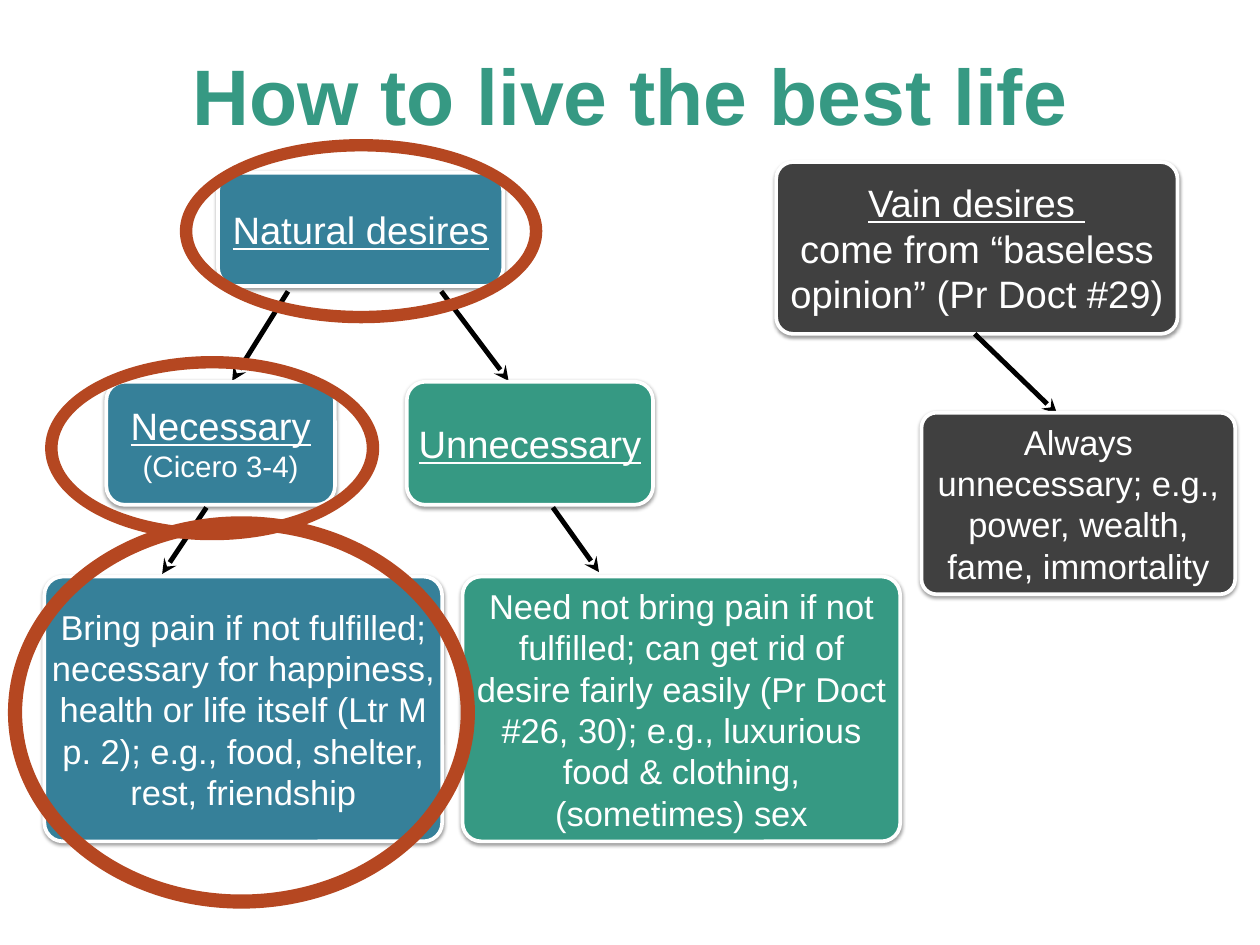
from lxml.etree import SubElement
from pptx import Presentation
from pptx.dml.color import RGBColor
from pptx.enum.shapes import MSO_CONNECTOR as Connector, MSO_SHAPE as Shape
from pptx.enum.text import MSO_ANCHOR as Anchor, PP_ALIGN as Align
from pptx.oxml.ns import qn
from pptx.util import Inches, Pt

BLUE = RGBColor(0x36, 0x80, 0x99)
GREEN = RGBColor(0x36, 0x99, 0x83)
GRAY = RGBColor(0x40, 0x40, 0x40)
RUST = RGBColor(0xB5, 0x47, 0x21)
BLACK = RGBColor(0, 0, 0)
WHITE = RGBColor(0xFF, 0xFF, 0xFF)


class DesireChart:
    """Draw the styled elements of the desires slide."""

    font = "Arial"
    heading_size = 31
    body_size = 28
    note_size = 24

    def __init__(self, page):
        self.page = page

    def add_text(self, frame, paragraphs, color, inset=0, bold=False):
        frame.word_wrap = True
        frame.vertical_anchor = Anchor.MIDDLE
        frame.margin_left = frame.margin_right = Inches(inset)
        frame.margin_top = frame.margin_bottom = Inches(inset)
        for index, spans in enumerate(paragraphs):
            para = frame.add_paragraph() if index else frame.paragraphs[0]
            para.alignment = Align.CENTER
            for text, size, underline in spans:
                span = para.add_run()
                span.text = text
                span.font.name = self.font
                span.font.size = Pt(size)
                span.font.bold = bold
                span.font.underline = underline
                span.font.color.rgb = color

    def title(self, left, top, width, height, text):
        box = self.page.shapes.add_textbox(
            Inches(left), Inches(top), Inches(width), Inches(height))
        self.add_text(box.text_frame, [[(text, 64, False)]], GREEN, 0.06, True)

    def shape(self, kind, left, top, width, height, color):
        shape = self.page.shapes.add_shape(
            kind, Inches(left), Inches(top), Inches(width), Inches(height))
        shape.fill.solid()
        shape.fill.fore_color.rgb = color
        shape.shadow.inherit = False
        return shape

    def card(self, left, top, width, height, color, paragraphs, radius=0.21):
        card = self.shape(Shape.ROUNDED_RECTANGLE, left, top, width, height, color)
        card.adjustments[0] = radius / height
        card.line.color.rgb = WHITE
        card.line.width = Pt(3)
        effects = card.element.spPr.find(qn("a:effectLst"))
        shadow = SubElement(effects, qn("a:outerShdw"), blurRad=str(Pt(3.1)),
                            dist=str(Pt(1.6)), dir="5400000", rotWithShape="0")
        shade = SubElement(shadow, qn("a:srgbClr"), val=str(BLACK))
        SubElement(shade, qn("a:alpha"), val="38000")
        self.add_text(card.text_frame, paragraphs, WHITE)

    def ring(self, left, top, width, height, thickness):
        ring = self.shape(Shape.DONUT, left, top, width, height, RUST)
        ring.adjustments[0] = thickness / min(width, height)
        ring.line.fill.background()

    def arrow(self, x1, y1, x2, y2):
        arrow = self.page.shapes.add_connector(
            Connector.STRAIGHT, Inches(x1), Inches(y1), Inches(x2), Inches(y2))
        arrow.line.color.rgb = BLACK
        arrow.line.width = Pt(4)
        properties = arrow.element.spPr
        SubElement(properties.find(qn("a:ln")), qn("a:tailEnd"), type="stealth")
        SubElement(properties, qn("a:effectLst"))

    def heading(self, text):
        return text, self.heading_size, True

    def body(self, text):
        return [[(text, self.body_size, False)]]


def main():
    deck = Presentation()
    deck.slide_width, deck.slide_height = Inches(14.22), Inches(10.67)
    chart = DesireChart(deck.slides.add_slide(deck.slide_layouts[6]))
    chart.title(0.71, 0.43, 12.8, 1.27, "How to live the best life")

    chart.card(2.46, 1.95, 3.22, 1.28, BLUE, [[chart.heading("Natural desires")]])
    chart.arrow(3.25, 3.29, 2.62, 4.3)
    chart.card(1.2, 4.31, 2.58, 1.39, BLUE, [[
        chart.heading("Necessary"),
        (" ", chart.heading_size, False),
        ("(Cicero 3-4)", chart.note_size, False)]])
    chart.arrow(2.33, 5.73, 1.83, 6.48)
    chart.card(0.5, 6.51, 4.49, 2.99, BLUE, chart.body(
        "Bring pain if not fulfilled; necessary for happiness, health or life "
        "itself (Ltr M p. 2); e.g., food, shelter, rest, friendship"))

    chart.arrow(4.98, 3.29, 5.74, 4.3)
    chart.card(4.59, 4.31, 2.78, 1.39, GREEN, [[chart.heading("Unnecessary")]])
    chart.arrow(6.24, 5.73, 6.76, 6.46)
    chart.card(5.22, 6.51, 4.94, 2.99, GREEN, chart.body(
        "Need not bring pain if not fulfilled; can get rid of desire fairly "
        "easily (Pr Doct #26, 30); e.g., luxurious food & clothing, "
        "(sometimes) sex"))

    chart.card(8.76, 1.83, 4.53, 1.94, GRAY, [
        [chart.heading("Vain desires ")],
        [("come from “baseless opinion” (Pr Doct #29)",
          chart.heading_size, False)]], 0.19)
    chart.arrow(11, 3.77, 11.93, 4.67)
    chart.card(10.4, 4.66, 3.54, 2.05, GRAY, chart.body(
        "Always unnecessary; e.g., power, wealth, fame, immortality"), 0.17)

    chart.ring(0.51, 4.02, 3.77, 2.08, 0.14)
    chart.ring(2.03, 1.57, 4.09, 2.08, 0.14)
    chart.ring(0.09, 5.83, 5.27, 4.43, 0.16)
    deck.save("out.pptx")


if __name__ == "__main__":
    main()
